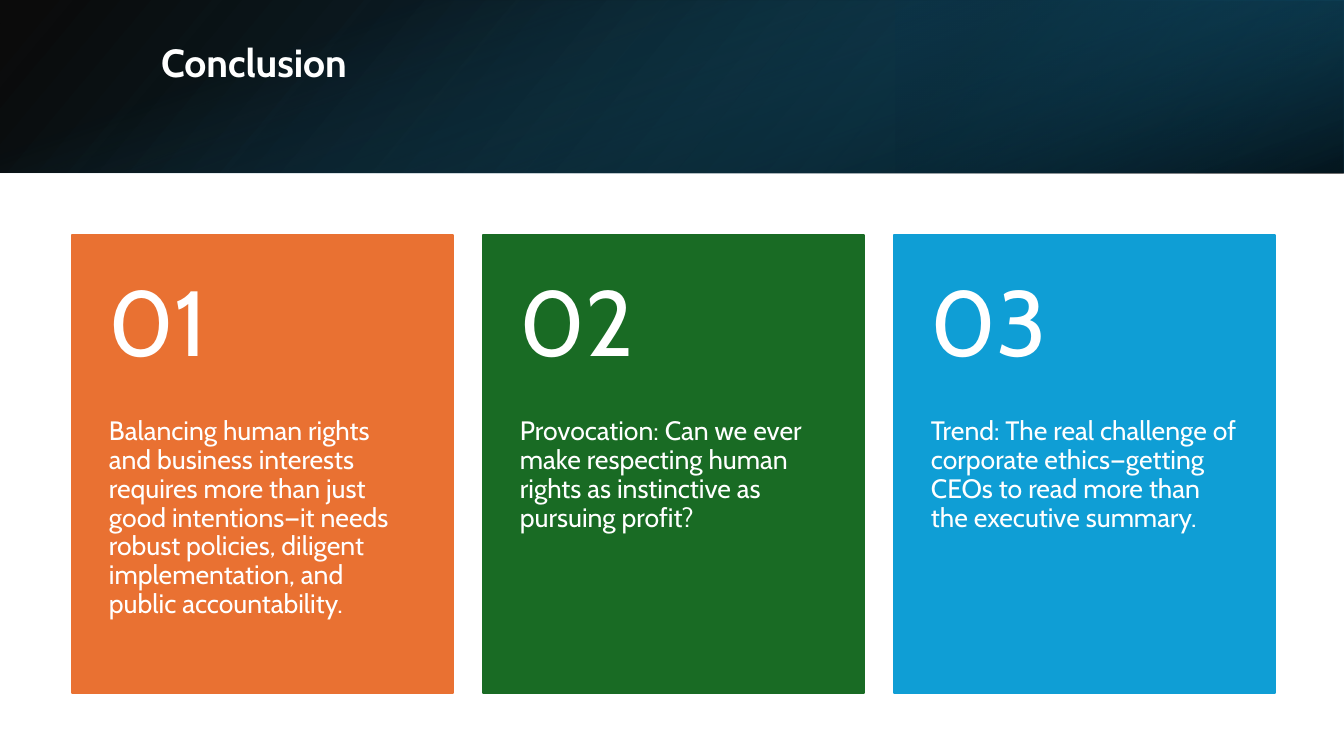
"""Build the conclusion slide: a gradient header and three numbered cards."""
from dataclasses import dataclass

from lxml.etree import SubElement
from pptx import Presentation
from pptx.dml.color import RGBColor
from pptx.enum.shapes import MSO_SHAPE
from pptx.enum.text import MSO_ANCHOR, PP_ALIGN
from pptx.oxml.ns import qn
from pptx.util import Pt

TITLE = "Conclusion"
CARDS = [
    ("01", "E97132", "Balancing human rights and business interests requires more than just good "
     "intentions—it needs robust policies, diligent implementation, and public accountability."),
    ("02", "196B24", "Provocation: Can we ever make respecting human rights as instinctive as "
     "pursuing profit?"),
    ("03", "0F9ED5", "Trend: The real challenge of corporate ethics—getting CEOs to read more "
     "than the executive summary."),
]
BANDS = [
    {"box": (0, 0, 1344, 173), "rotation": 0, "flip": True, "angle": 140,
     "stops": [(0, "000000", 96), (100, "104862", 100)]},
    {"box": (896, 0, 448, 173), "rotation": 180, "flip": True, "angle": 320,
     "stops": [(19, "0B3041", 68), (100, "156082", 79)]},
    {"box": (585, -585, 173, 1344), "rotation": 90, "flip": False, "angle": 340,
     "stops": [(23, "156082", 0), (99, "000000", 74)]},
]


@dataclass(frozen=True)
class Theme:
    font: str = "Cabin"
    text: str = "FFFFFF"
    title_size: int = 28
    number_size: int = 66
    body_size: int = 19
    outline: float = 1.5
    line_spacing: float = 0.9


THEME = Theme()
SLIDE_SIZE = (1344, 756)
TITLE_BOX = (151, 38, 1107, 97)
CARD_LEFT, CARD_TOP, CARD_PITCH = 72, 235, 411
CARD_WIDTH, NUMBER_HEIGHT, BODY_HEIGHT = 381, 183, 275


def px(length):
    return round(length * 914400 / 100.8)


def scaled(box):
    return [px(length) for length in box]


def assign(target, values):
    for name, value in values.items():
        setattr(target, name, value)


def write(shape, text, size, insets, anchor, bold=False):
    frame = shape.text_frame
    sides = ("margin_left", "margin_top", "margin_right", "margin_bottom")
    assign(frame, dict(zip(sides, scaled(insets))))
    assign(frame, {"word_wrap": True, "vertical_anchor": anchor})
    para = frame.paragraphs[0]
    assign(para, {"alignment": PP_ALIGN.LEFT, "line_spacing": THEME.line_spacing})
    span = para.add_run()
    span.text = text
    assign(span.font, {"name": THEME.font, "size": Pt(size), "bold": bold})
    span.font.color.rgb = RGBColor.from_string(THEME.text)


def add_rectangle(shapes, box):
    shape = shapes.add_shape(MSO_SHAPE.RECTANGLE, *scaled(box))
    shape.shadow.inherit = False
    return shape


def add_band(page, band):
    shape = add_rectangle(page.shapes, band["box"])
    shape.rotation = band["rotation"]
    shape.line.fill.background()
    properties = shape.element.spPr
    if band["flip"]:
        properties.find(qn("a:xfrm")).set("flipH", "1")
    gradient = SubElement(properties, qn("a:gradFill"), rotWithShape="1")
    properties.find(qn("a:prstGeom")).addnext(gradient)
    stops = SubElement(gradient, qn("a:gsLst"))
    for position, color, opacity in band["stops"]:
        stop = SubElement(stops, qn("a:gs"), pos=str(position * 1000))
        tint = SubElement(stop, qn("a:srgbClr"), val=color)
        SubElement(tint, qn("a:alpha"), val=str(opacity * 1000))
    SubElement(gradient, qn("a:lin"), ang=str(band["angle"] * 60000), scaled="0")


def add_card(page, index, number, color, body):
    shapes = page.shapes.add_group_shape().shapes
    left = CARD_LEFT + index * CARD_PITCH
    panel = add_rectangle(shapes, (left, CARD_TOP, CARD_WIDTH, NUMBER_HEIGHT + BODY_HEIGHT))
    panel.fill.solid()
    panel.fill.fore_color.rgb = RGBColor.from_string(color)
    panel.line.color.rgb = RGBColor.from_string(color)
    panel.line.width = Pt(THEME.outline)
    body_box = (left, CARD_TOP + NUMBER_HEIGHT, CARD_WIDTH, BODY_HEIGHT)
    number_box = (left, CARD_TOP, CARD_WIDTH, NUMBER_HEIGHT)
    write(shapes.add_textbox(*scaled(body_box)), body, THEME.body_size,
          (37, 0, 37, 36), MSO_ANCHOR.TOP)
    write(shapes.add_textbox(*scaled(number_box)), number, THEME.number_size,
          (37, 18, 37, 18), MSO_ANCHOR.MIDDLE)


def main():
    deck = Presentation()
    deck.slide_width, deck.slide_height = scaled(SLIDE_SIZE)
    page = deck.slides.add_slide(deck.slide_layouts[5])
    for band in BANDS:
        add_band(page, band)
    title = page.shapes.title
    assign(title, dict(zip(("left", "top", "width", "height"), scaled(TITLE_BOX))))
    write(title, TITLE, THEME.title_size, (10, 5, 10, 49), MSO_ANCHOR.MIDDLE, bold=True)
    page.shapes.element.append(title.element)
    for index, card in enumerate(CARDS):
        add_card(page, index, *card)
    deck.save("out.pptx")


if __name__ == "__main__":
    main()
